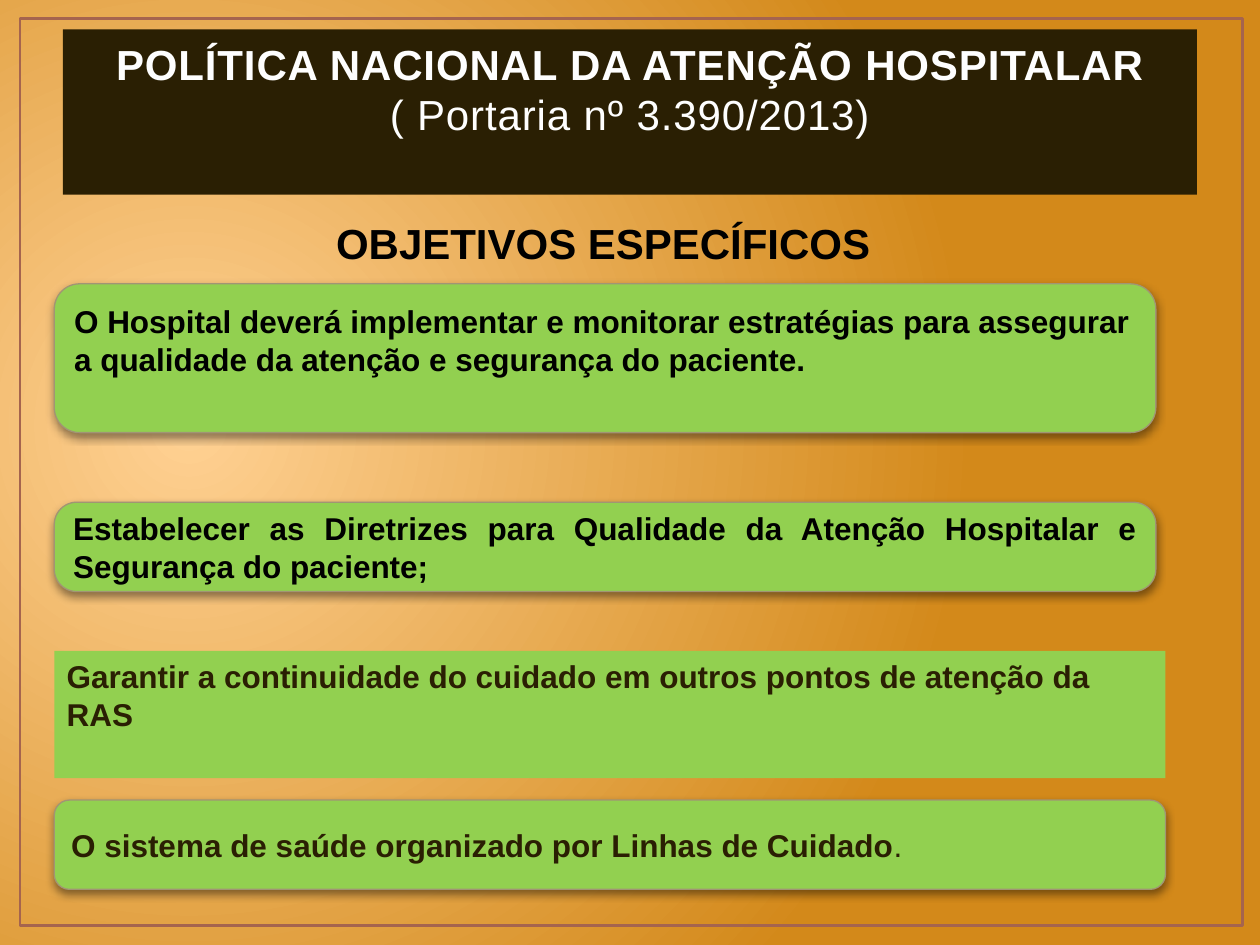
from pptx import Presentation
from pptx.dml.color import RGBColor
from pptx.enum.shapes import MSO_SHAPE
from pptx.enum.text import MSO_ANCHOR, PP_ALIGN
from pptx.oxml import parse_xml
from pptx.oxml.ns import qn
from pptx.util import Pt

RECT, ROUND = MSO_SHAPE.RECTANGLE, MSO_SHAPE.ROUNDED_RECTANGLE
TOP, MID, BOTTOM = MSO_ANCHOR.TOP, MSO_ANCHOR.MIDDLE, MSO_ANCHOR.BOTTOM
LEFT, CENTER, JUST = PP_ALIGN.LEFT, PP_ALIGN.CENTER, PP_ALIGN.JUSTIFY
NS = 'xmlns:a="http://schemas.openxmlformats.org/drawingml/2006/main"'
COLORS = {
    "glow": "FFD193", "amber": "D3891A", "frame": "A5644E", "dark": "2A1F03",
    "white": "FEFEFE", "black": "000000", "green": "92D050", "edge": "A19574",
}


class Deck:
    font = "Arial"

    def __init__(self, width, height):
        self.prs = Presentation()
        self.prs.slide_width, self.prs.slide_height = Pt(width), Pt(height)
        self.slide = self.prs.slides.add_slide(self.prs.slide_layouts[6])

    def color(self, name):
        return RGBColor.from_string(COLORS[name])

    def backdrop(self, inner, outer):
        fill = self.slide.background.fill
        fill.gradient()
        for stop, name, pos in zip(fill.gradient_stops, (inner, outer), (0, 1)):
            stop.color.rgb = self.color(name)
            stop.position = pos
        lin = next(self.slide.element.iter(qn("a:lin")))
        lin.getparent().replace(lin, parse_xml(
            f'<a:path {NS} path="circle"><a:fillToRect l="15000" t="50000" '
            'r="85000" b="60000"/></a:path>'))

    def box(self, kind, spot, fill=None, line=None, weight=0.75):
        shape = self.slide.shapes.add_shape(kind, *map(Pt, spot))
        shape.shadow.inherit = False
        if fill:
            shape.fill.solid()
            shape.fill.fore_color.rgb = self.color(fill)
        else:
            shape.fill.background()
        if line:
            shape.line.color.rgb = self.color(line)
            shape.line.width = Pt(weight)
        else:
            shape.line.fill.background()
        return shape

    def card(self, spot, adjust=0.17):
        shape = self.box(ROUND, spot, "green", "edge")
        shape.adjustments[0] = adjust
        effects = next(shape.element.iter(qn("a:effectLst")))
        effects.append(parse_xml(
            f'<a:outerShdw {NS} blurRad="{Pt(5)}" dist="{Pt(2)}" dir="5400000" '
            'rotWithShape="0"><a:srgbClr val="000000"><a:alpha val="43000"/>'
            '</a:srgbClr></a:outerShdw>'))
        return shape

    def label(self, spot):
        return self.slide.shapes.add_textbox(*map(Pt, spot))

    def put(self, shape, text, size, color, align=LEFT, anchor=MID, lift=0):
        """Fill a shape with bold text; lift adds room below the text."""
        frame = shape.text_frame
        frame.word_wrap = True
        frame.vertical_anchor = anchor
        frame.margin_bottom = Pt(3.6 + lift)
        frame.text = text
        for para in frame.paragraphs:
            para.alignment = align
            for run in para.runs:
                self.style(run, size, color)
        return frame

    def style(self, run, size, color, bold=True):
        run.font.name, run.font.size, run.font.bold = self.font, Pt(size), bold
        run.font.color.rgb = self.color(color)

    def save(self):
        self.prs.save("out.pptx")


def main():
    deck = Deck(720, 540)
    left, wide, broad = 31, 629.5, 635

    # Background and frame
    deck.backdrop("glow", "amber")
    deck.box(RECT, (11.5, 10.5, 698.5, 518.5), line="frame", weight=1.5)

    # Title band
    band = deck.box(RECT, (36, 16.8, 648, 94.4), "dark")
    frame = deck.put(
        band, "POLÍTICA NACIONAL DA ATENÇÃO HOSPITALAR\n( Portaria nº 3.390/2013)",
        24, "white", CENTER, BOTTOM, lift=28)
    for para in frame.paragraphs:
        para.runs[0]._r.get_or_add_rPr().set("spc", "50")
    frame.paragraphs[1].runs[0].font.bold = False

    # Heading
    deck.put(deck.label((115, 120.5, 459.5, 36)), "OBJETIVOS ESPECÍFICOS",
             24, "black", CENTER, TOP)

    # Goals
    deck.put(deck.card((left, 162.2, wide, 85)),
             "O Hospital deverá implementar e monitorar estratégias para "
             "assegurar a qualidade da atenção e segurança do paciente.",
             18, "black", lift=21)
    deck.put(deck.card((left, 287, wide, 51), 0.25),
             "Estabelecer as Diretrizes para Qualidade da Atenção Hospitalar "
             "e Segurança do paciente;", 18, "black", JUST)
    deck.put(deck.box(RECT, (left, 372, broad, 72.7), "green"),
             "Garantir a continuidade do cuidado em outros pontos de atenção "
             "da RAS", 18, "dark", anchor=TOP)
    frame = deck.put(deck.card((left, 457.2, broad, 51)),
                     "O sistema de saúde organizado por Linhas de Cuidado",
                     18, "dark")
    stop = frame.paragraphs[0].add_run()
    stop.text = "."
    deck.style(stop, 18, "dark", bold=False)

    deck.save()


if __name__ == "__main__":
    main()
